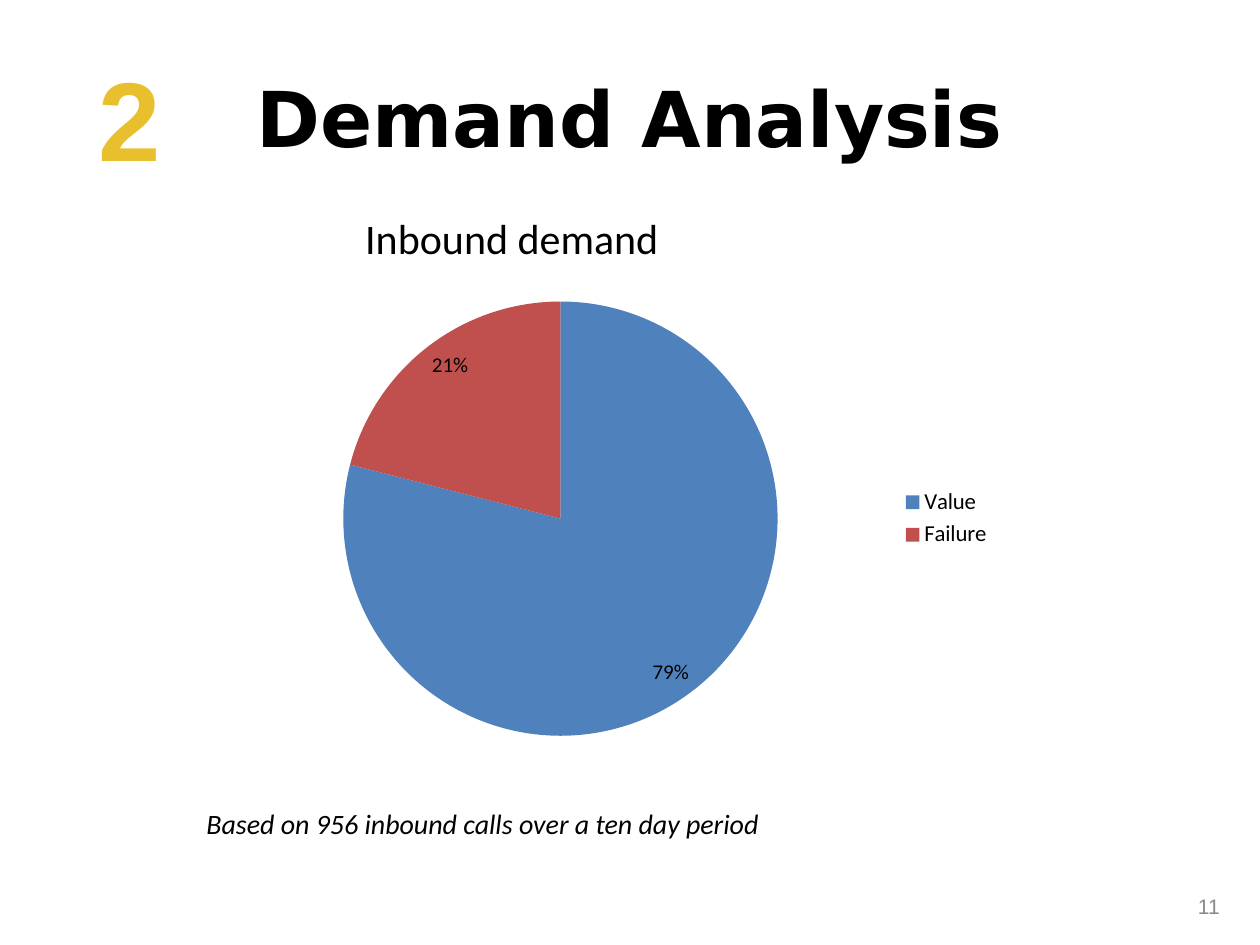
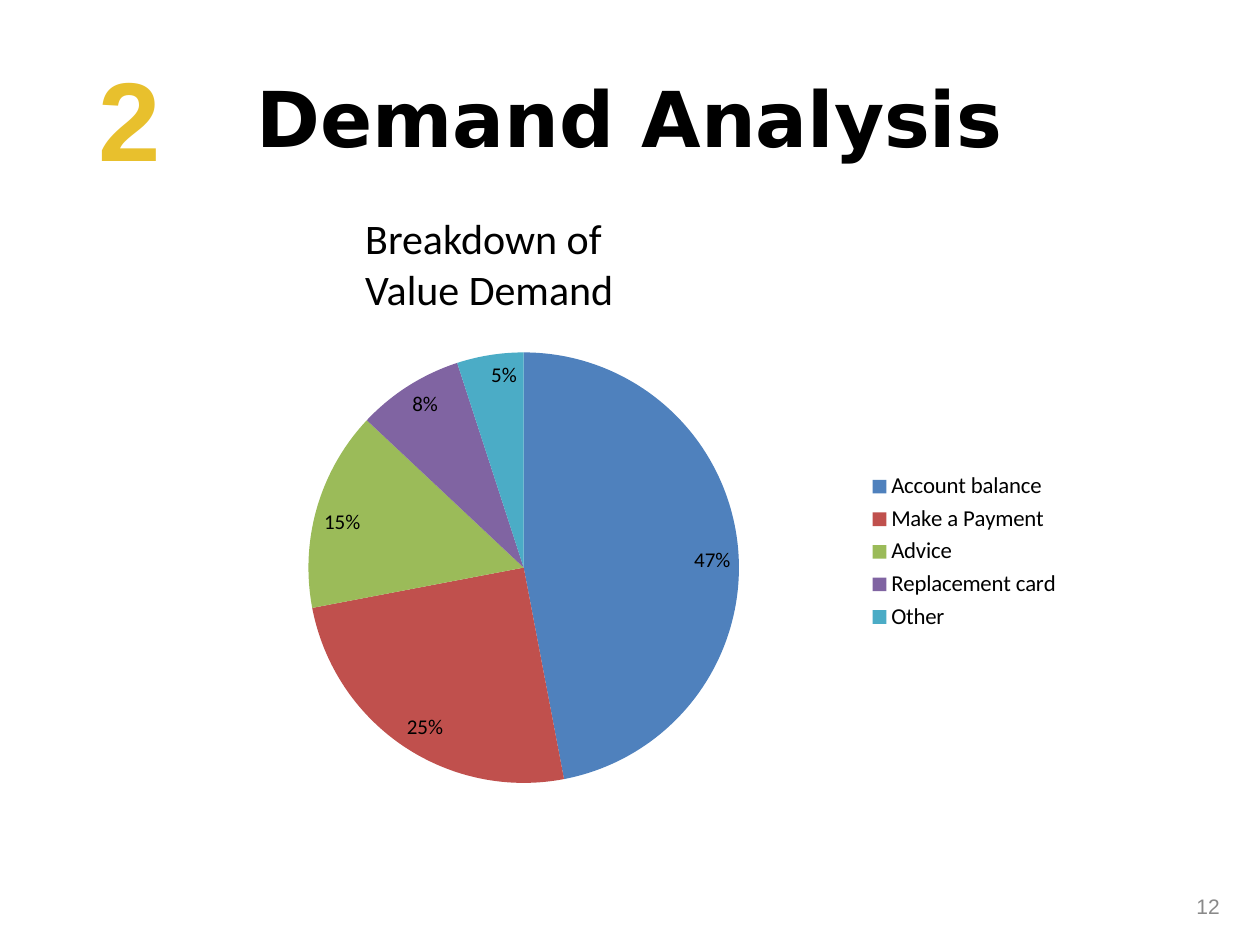
from lxml.etree import SubElement
from pptx import Presentation
from pptx.chart.data import CategoryChartData
from pptx.dml.color import RGBColor
from pptx.enum.chart import XL_CHART_TYPE, XL_LABEL_POSITION as LabelPosition
from pptx.enum.chart import XL_LEGEND_POSITION as LegendPosition
from pptx.enum.text import MSO_ANCHOR as Anchor, PP_ALIGN as Align
from pptx.oxml.ns import qn
from pptx.util import Inches, Pt

WIDTH, HEIGHT = Inches(10), Inches(7.5)
COLUMNS, ROWS = 100, 75
INSETS = (0.1, 0.05, 0.1, 0.05)
FLUSH = (0, 0, 0, 0)
COLORS = {
    "background": "FFFFFF",
    "text": "000000",
    "section": "E8C02D",
    "page": "898989",
}
SLICE_COLORS = ["4F81BD", "C0504D", "9BBB59", "8064A2", "4BACC6"]


def color(name):
    return RGBColor.from_string(COLORS[name])


def grid(left, top, width, height):
    column, row = WIDTH / COLUMNS, HEIGHT / ROWS
    return [round(n) for n in (left * column, top * row, width * column, height * row)]


def add_text(slide, text, area, size, font="Calibri", ink="text", bold=False,
             italic=False, align=Align.LEFT, anchor=Anchor.TOP, insets=INSETS):
    frame = slide.shapes.add_textbox(*grid(*area)).text_frame
    frame.word_wrap = True
    frame.vertical_anchor = anchor
    (frame.margin_left, frame.margin_top,
     frame.margin_right, frame.margin_bottom) = map(Inches, insets)
    frame.text = text
    for paragraph in frame.paragraphs:
        paragraph.alignment = align
        for run in paragraph.runs:
            style = run.font
            style.size, style.name = Pt(size), font
            style.bold, style.italic = bold, italic
            style.color.rgb = color(ink)


def place_pie(chart, area, center, diameter):
    left, top, width, height = area
    shares = {
        "x": (center[0] - diameter / 2 - left) / width,
        "y": (center[1] - diameter / 2 - top) / height,
        "w": diameter / width,
        "h": diameter / height,
    }
    plot_area = chart.plots[0]._element.getparent()
    for old in plot_area.findall(qn("c:layout")):
        plot_area.remove(old)
    layout = SubElement(plot_area, qn("c:layout"))
    plot_area.insert(0, layout)
    manual = SubElement(layout, qn("c:manualLayout"))
    settings = {"layoutTarget": "inner", "xMode": "edge", "yMode": "edge"}
    settings.update({side: f"{share:.3f}" for side, share in shares.items()})
    for tag, value in settings.items():
        SubElement(manual, qn(f"c:{tag}")).set("val", value)


def add_demand_pie(slide, demand, area, center, diameter):
    data = CategoryChartData(number_format="0%")
    data.categories = list(demand)
    data.add_series("Series 1", list(demand.values()))
    chart = slide.shapes.add_chart(XL_CHART_TYPE.PIE, *grid(*area), data).chart
    chart.has_title = False
    chart.font.name, chart.font.size = "Calibri", Pt(10)
    chart.font.color.rgb = color("text")

    chart.has_legend = True
    chart.legend.position = LegendPosition.RIGHT
    chart.legend.include_in_layout = False
    chart.legend.font.size = Pt(13)

    pie = chart.plots[0]
    pie.vary_by_categories = True
    for index, slice_color in enumerate(SLICE_COLORS[:len(demand)]):
        fill = pie.series[0].points[index].format.fill
        fill.solid()
        fill.fore_color.rgb = RGBColor.from_string(slice_color)
    pie.has_data_labels = True
    labels = pie.data_labels
    labels.show_value, labels.show_percentage = True, False
    labels.number_format, labels.number_format_is_linked = "0%", False
    labels.position = LabelPosition.INSIDE_END
    labels.font.size = Pt(12)
    place_pie(chart, area, center, diameter)


def add_demand_slide(deck, page, heading, heading_rows):
    slide = deck.slides.add_slide(deck.slide_layouts[6])
    slide.background.fill.solid()
    slide.background.fill.fore_color.rgb = color("background")
    add_text(slide, str(page), (73.4, 70.9, 23.4, 2.8), 12, font="Arial",
             ink="page", align=Align.RIGHT, insets=FLUSH)
    add_text(slide, "2", (7.8, 3.9, 28.1, 12.5), 64, font="Arial",
             ink="section", bold=True, insets=FLUSH)
    add_text(slide, "Demand Analysis", (5, 3, 90, 12.5), 44, font="DejaVu Sans",
             bold=True, align=Align.CENTER, anchor=Anchor.MIDDLE)
    add_text(slide, heading, (28, 16.4, 33.9, heading_rows), 24)
    return slide


def main():
    deck = Presentation()
    deck.slide_width, deck.slide_height = WIDTH, HEIGHT

    inbound = add_demand_slide(deck, 11, "Inbound demand", 5)
    add_demand_pie(inbound, {"Value": 0.79, "Failure": 0.21},
                   (17.7, 22.5, 62, 37.3), center=(44.5, 41.15), diameter=34.5)
    add_text(inbound, "Based on 956 inbound calls over a ten day period",
             (15.4, 63.5, 74.8, 3.7), 16, italic=True)

    breakdown = add_demand_slide(deck, 12, "Breakdown of\nValue Demand", 9.1)
    value_demand = {
        "Account balance": 0.47,
        "Make a Payment": 0.25,
        "Advice": 0.15,
        "Replacement card": 0.08,
        "Other": 0.05,
    }
    add_demand_pie(breakdown, value_demand, (14.6, 24.1, 70.6, 39.4),
                   center=(41.6, 45.05), diameter=34.2)

    deck.save("out.pptx")


if __name__ == "__main__":
    main()
